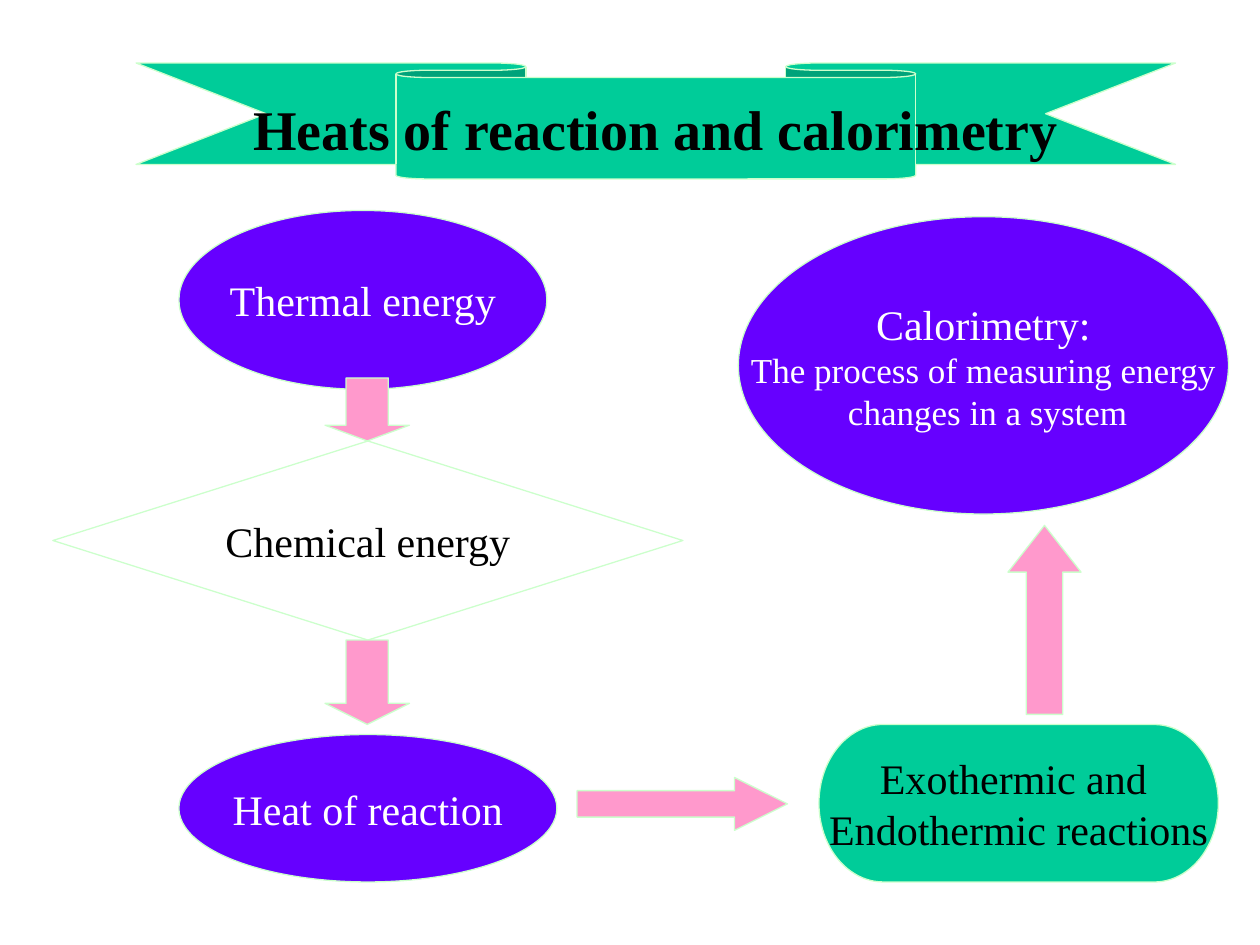
"""Build a flow chart slide on heats of reaction and calorimetry."""
from dataclasses import dataclass
from typing import Any

from pptx import Presentation
from pptx import util as u
from pptx.dml.color import RGBColor
from pptx.enum import shapes, text

COLORS = {
    "green": "00CC99",
    "violet": "6600FF",
    "pink": "FF99CC",
    "outline": "CCFFCC",
    "white": "FFFFFF",
    "black": "000000",
}
FONT = "Times New Roman"
KIND = shapes.MSO_SHAPE


@dataclass(frozen=True)
class Line:
    """One paragraph of a label."""

    words: str
    size: int = 24


@dataclass(frozen=True)
class Figure:
    """A filled shape with its place in inches and optional label."""

    kind: Any
    place: tuple[float, float, float, float]
    fill: str = "pink"
    lines: tuple[Line, ...] = ()
    ink: str = "black"
    adjustments: tuple[float, ...] = ()


RIBBON = Figure(KIND.DOWN_RIBBON, (1.08, 0.5, 8.25, 0.92), "green", adjustments=(0.125, 0.5))
TITLE_PLACE = (1.08, 0.61, 8.25, 0.81)

FIGURES = (
    Figure(KIND.OVAL, (1.42, 1.67, 2.92, 1.42), "violet", (Line("Thermal energy"),), "white"),
    Figure(KIND.FLOWCHART_DECISION, (0.42, 3.5, 5, 1.58), "white", (Line("Chemical energy"),)),
    Figure(KIND.DOWN_ARROW, (2.58, 3, 0.67, 0.5), adjustments=(0.5, 0.25)),
    Figure(KIND.OVAL, (1.42, 5.83, 3, 1.17), "violet", (Line("Heat of reaction"),), "white"),
    Figure(KIND.DOWN_ARROW, (2.58, 5.08, 0.67, 0.67), adjustments=(0.5, 0.25)),
    Figure(KIND.RIGHT_ARROW, (4.58, 6.17, 1.67, 0.42), adjustments=(0.5, 1)),
    Figure(
        KIND.FLOWCHART_TERMINATOR, (6.5, 5.75, 3.17, 1.25), "green",
        (Line("Exothermic and "), Line("Endothermic reactions")),
    ),
    Figure(KIND.UP_ARROW, (8, 4.17, 0.58, 1.5), adjustments=(0.5, 0.64)),
    Figure(
        KIND.OVAL, (5.86, 1.72, 3.89, 2.36), "violet",
        (
            Line("Calorimetry:"),
            Line("The process of measuring energy", 20),
            Line(" changes in a system", 20),
        ),
        "white",
    ),
)


def color(name: str) -> RGBColor:
    """Look up a palette colour."""
    return RGBColor.from_string(COLORS[name])


def write(box: Any, lines: tuple[Line, ...], *, ink: str = "black", bold: bool = False) -> None:
    """Write centred, unwrapped lines into a shape."""
    frame = box.text_frame
    frame.auto_size = text.MSO_AUTO_SIZE.NONE
    frame.word_wrap = False
    frame.vertical_anchor = text.MSO_ANCHOR.MIDDLE
    for index, line in enumerate(lines):
        para = frame.add_paragraph() if index else frame.paragraphs[0]
        para.alignment = text.PP_ALIGN.CENTER
        span = para.add_run()
        span.text = line.words
        span.font.name = FONT
        span.font.size = u.Pt(line.size)
        span.font.bold = bold
        span.font.color.rgb = color(ink)


def draw(slide: Any, figure: Figure) -> Any:
    """Draw one figure and return its shape."""
    box = slide.shapes.add_shape(figure.kind, *map(u.Inches, figure.place))
    box.shadow.inherit = False
    for index, value in enumerate(figure.adjustments):
        box.adjustments[index] = value
    box.fill.solid()
    box.fill.fore_color.rgb = color(figure.fill)
    box.line.color.rgb = color("outline")
    box.line.width = u.Pt(0.75)
    if figure.lines:
        write(box, figure.lines, ink=figure.ink)
    return box


def main() -> None:
    """Create and save the deck."""
    deck = Presentation()
    deck.slide_width, deck.slide_height = u.Inches(10), u.Inches(7.5)
    slide = deck.slides.add_slide(deck.slide_layouts.get_by_name("Title Only"))
    title = slide.shapes.title
    title.left, title.top, title.width, title.height = map(u.Inches, TITLE_PLACE)
    write(title, (Line("Heats of reaction and calorimetry", 32),), bold=True)
    title.element.addprevious(draw(slide, RIBBON).element)
    for figure in FIGURES:
        draw(slide, figure)
    deck.save("out.pptx")


if __name__ == "__main__":
    main()
